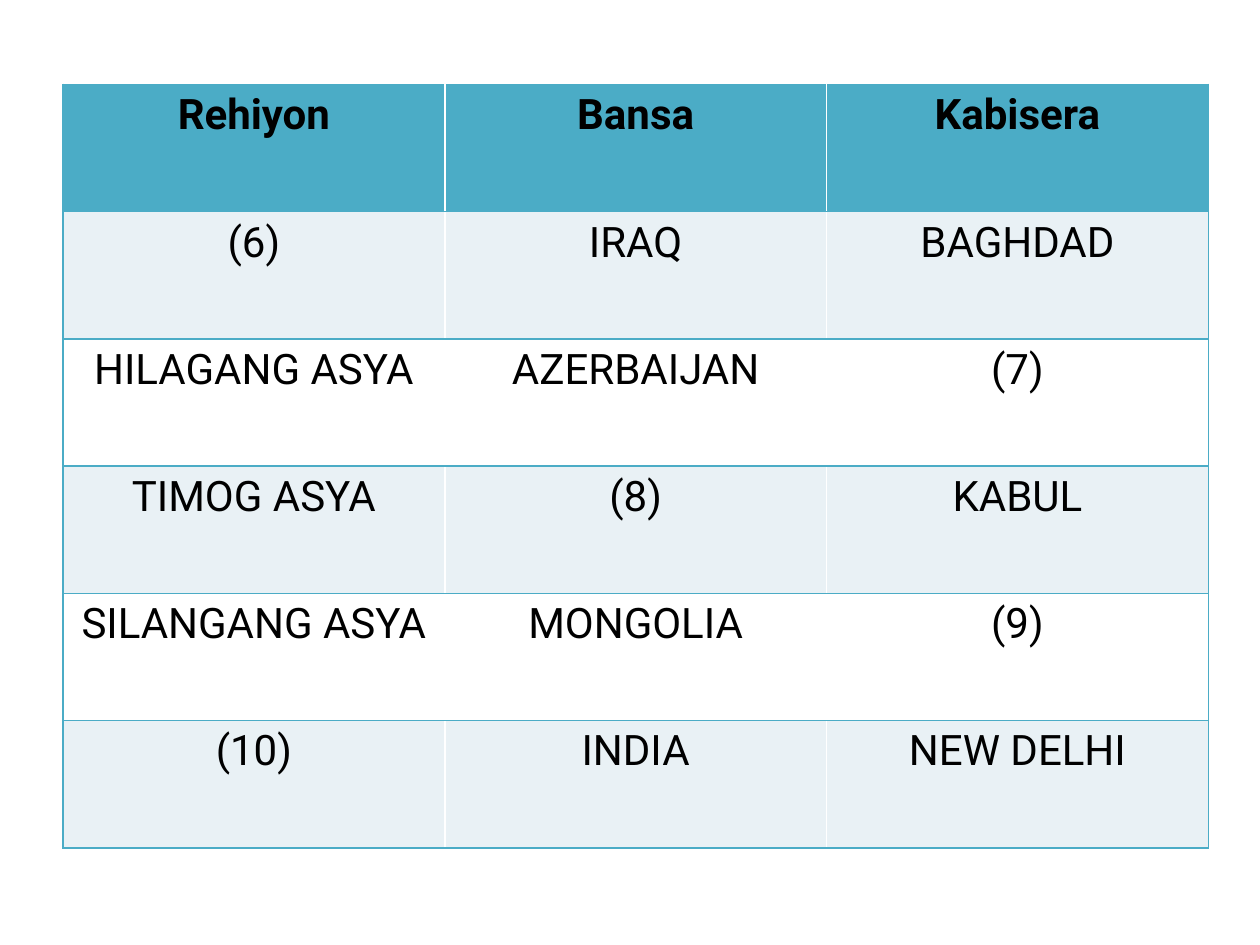
from lxml import etree
from pptx import Presentation
from pptx.dml.color import RGBColor
from pptx.enum.text import PP_ALIGN
from pptx.oxml.ns import qn
from pptx.util import Inches, Pt

# Content
HEADERS = ("Rehiyon", "Bansa", "Kabisera")
ANSWERS = [
    ("(6)", "IRAQ", "BAGHDAD"),
    ("HILAGANG ASYA", "AZERBAIJAN", "(7)"),
    ("TIMOG ASYA", "(8)", "KABUL"),
    ("SILANGANG ASYA", "MONGOLIA", "(9)"),
    ("(10)", "INDIA", "NEW DELHI"),
]

# Style
CENTER = PP_ALIGN.CENTER
FONT = "Roboto"
TEXT_SIZE = Pt(24)
BLACK = RGBColor(0x00, 0x00, 0x00)
WHITE = RGBColor(0xFF, 0xFF, 0xFF)
TEAL = RGBColor(0x4B, 0xAC, 0xC6)
PALE_BLUE = RGBColor(0xE9, 0xF1, 0xF5)

# Layout
LEFT, TOP = Inches(0.5), Inches(0.67)
COLUMN_WIDTH, ROW_HEIGHT = Inches(3.03), Inches(1.01)


def add_borders(cell, sides):
    """Draw 1 pt teal borders; sides must follow the order L, R, T, B."""
    properties = cell._tc.get_or_add_tcPr()
    for side in sides:
        line = etree.SubElement(properties, qn(f"a:ln{side}"), w=str(Pt(1)))
        fill = etree.SubElement(line, qn("a:solidFill"))
        etree.SubElement(fill, qn("a:srgbClr"), val=str(TEAL))


def fill_cell(cell, text, background, bold):
    cell.fill.solid()
    cell.fill.fore_color.rgb = background
    paragraph = cell.text_frame.paragraphs[0]
    paragraph.alignment = CENTER
    run = paragraph.add_run()
    run.text = text
    run.font.name = FONT
    run.font.size = TEXT_SIZE
    run.font.bold = bold
    run.font.color.rgb = BLACK


def main():
    presentation = Presentation()
    presentation.slide_width = Inches(10)
    presentation.slide_height = Inches(7.5)
    slide = presentation.slides.add_slide(presentation.slide_layouts[6])

    # Table of regions, countries and capitals
    rows = [HEADERS, *ANSWERS]
    last_column = len(HEADERS) - 1
    capitals = slide.shapes.add_table(
        len(rows), len(HEADERS), LEFT, TOP,
        COLUMN_WIDTH * len(HEADERS), ROW_HEIGHT * len(rows),
    ).table
    for column in capitals.columns:
        column.width = COLUMN_WIDTH
    for row in capitals.rows:
        row.height = ROW_HEIGHT

    # Outer frame and row rules, with no lines between columns
    column_sides = {0: "LTB", last_column: "RTB"}
    for r, entries in enumerate(rows):
        is_header = r == 0
        background = TEAL if is_header else PALE_BLUE if r % 2 else WHITE
        for c, entry in enumerate(entries):
            cell = capitals.cell(r, c)
            add_borders(cell, column_sides.get(c, "TB"))
            fill_cell(cell, entry, background, is_header)

    presentation.save("out.pptx")


if __name__ == "__main__":
    main()
